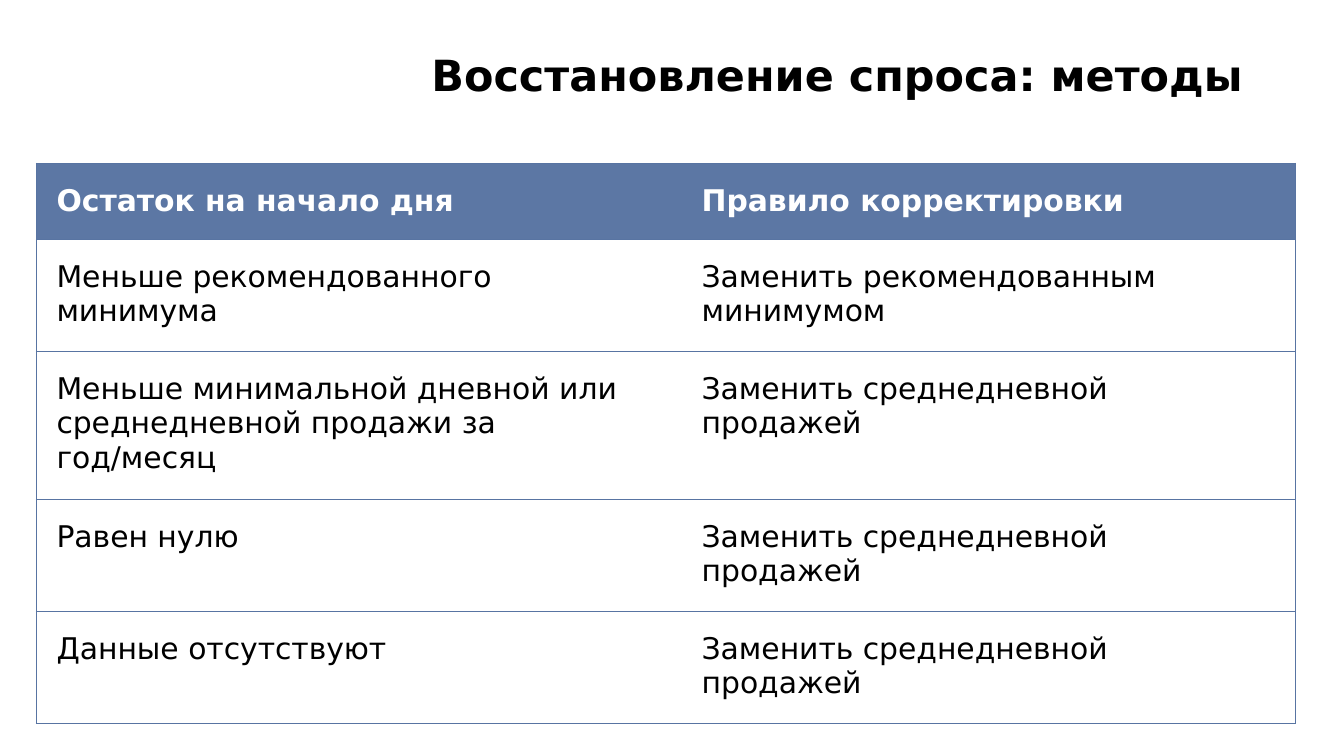
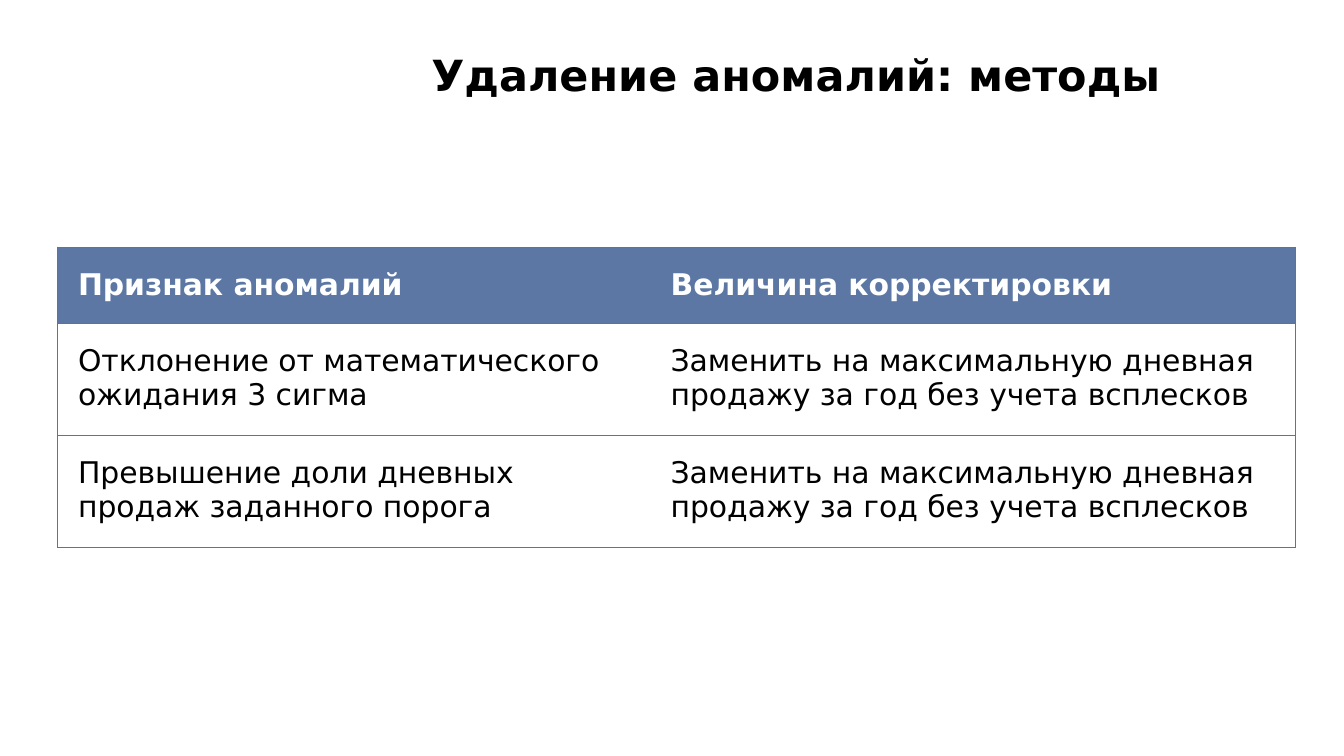
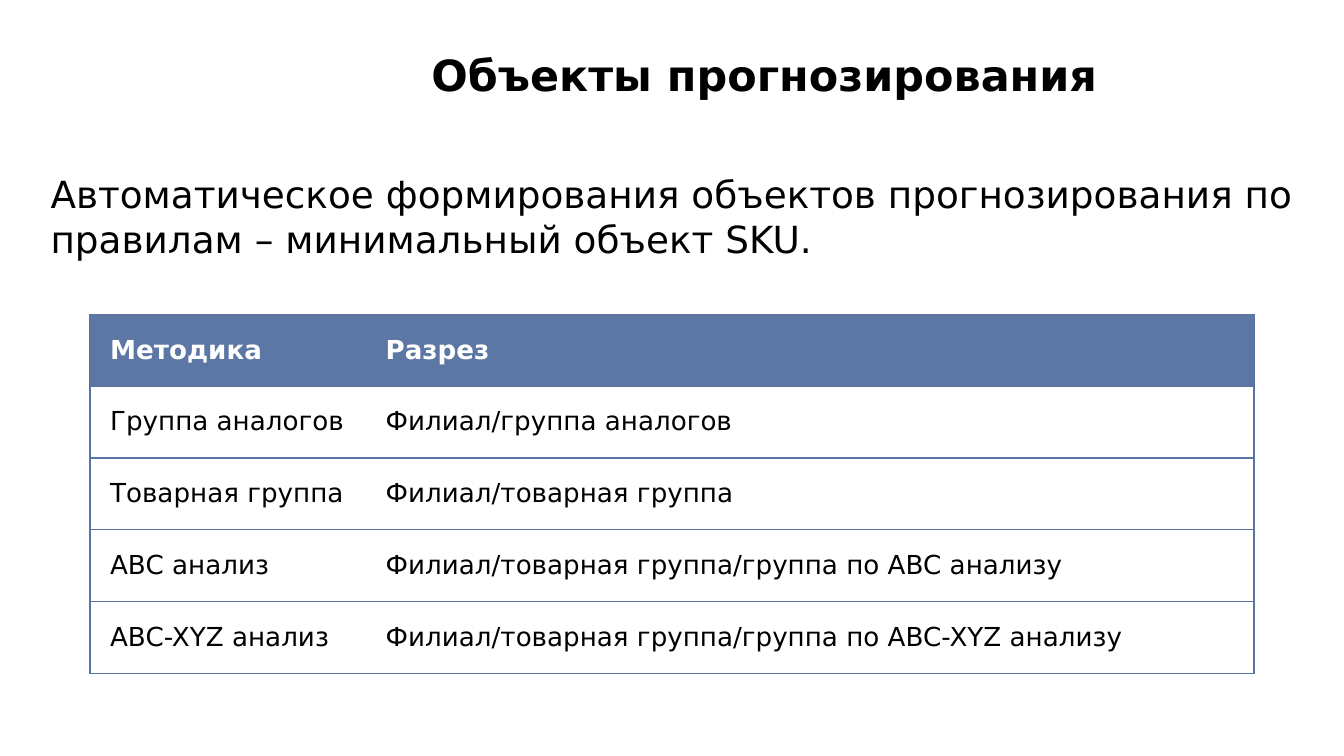
from dataclasses import dataclass

from lxml.etree import SubElement as Sub
from pptx import Presentation
from pptx.dml.color import RGBColor as RGB
from pptx.enum.text import MSO_ANCHOR as Anchor
from pptx.oxml.ns import qn
from pptx.util import Pt


@dataclass(frozen=True)
class Theme:
    face: str = "DejaVu Sans"
    ink: RGB = RGB(0, 0, 0)
    paper: RGB = RGB(255, 255, 255)
    head: RGB = RGB(0x5C, 0x77, 0xA4)
    rule: RGB = RGB(0x58, 0x74, 0xA2)
    title: float = 23
    lead: float = 20
    cell: float = 16
    small: float = 14
    line: float = 0.75
    pad: float = 10.8


T = Theme()

# Table contents: the header row comes first
DEMAND = [
    ("Остаток на начало дня", "Правило корректировки"),
    ("Меньше рекомендованного минимума", "Заменить рекомендованным минимумом"),
    ("Меньше минимальной дневной или среднедневной продажи за год/месяц",
     "Заменить среднедневной продажей"),
    ("Равен нулю", "Заменить среднедневной продажей"),
    ("Данные отсутствуют", "Заменить среднедневной продажей"),
]
SPIKES = [
    ("Признак аномалий", "Величина корректировки"),
    ("Отклонение от математического ожидания 3 сигма",
     "Заменить на максимальную дневная продажу за год без учета всплесков"),
    ("Превышение доли дневных продаж заданного порога",
     "Заменить на максимальную дневная продажу за год без учета всплесков"),
]
OBJECTS = [
    ("Методика", "Разрез"),
    ("Группа аналогов", "Филиал/группа аналогов"),
    ("Товарная группа", "Филиал/товарная группа"),
    ("ABC анализ", "Филиал/товарная группа/группа по ABC анализу"),
    ("ABC-XYZ анализ", "Филиал/товарная группа/группа по ABC-XYZ анализу"),
]


def style(para, size, color=T.ink, bold=False):
    form = {"name": T.face, "size": Pt(size), "bold": bold}
    for key, value in form.items():
        setattr(para.font, key, value)
    para.font.color.rgb = color


def add_text(slide, text, box, size, bold=False, anchor=Anchor.TOP):
    frame = slide.shapes.add_textbox(*map(Pt, box)).text_frame
    frame.word_wrap = True
    frame.vertical_anchor = anchor
    para = frame.paragraphs[0]
    para.text = text
    style(para, size, bold=bold)


def add_page(deck, title):
    slide = deck.slides.add_slide(deck.slide_layouts[6])
    add_text(slide, title, (224, 21, 478, 38), T.title, True, Anchor.MIDDLE)
    return slide


def set_edges(cell, shown):
    """Draw the shown sides and hide the others."""
    props = cell._tc.get_or_add_tcPr()
    for pos, side in enumerate("LRTB"):
        edge = Sub(props, qn(f"a:ln{side}"), w=str(Pt(T.line)))
        if side in shown:
            fill = Sub(edge, qn("a:solidFill"))
            Sub(fill, qn("a:srgbClr"), val=str(T.rule))
        else:
            Sub(edge, qn("a:noFill"))
        props.insert(pos, edge)


def fill_cell(cell, text, size, head):
    form = {"margin_left": Pt(T.pad), "margin_right": Pt(T.pad),
            "margin_top": Pt(T.pad), "margin_bottom": Pt(T.pad),
            "text": text}
    for key, value in form.items():
        setattr(cell, key, value)
    cell.fill.solid()
    cell.fill.fore_color.rgb = T.head if head else T.paper
    style(cell.text_frame.paragraphs[0], size,
          T.paper if head else T.ink, head)


def add_grid(slide, data, spot, widths, heights, size=T.cell):
    span = (*spot, sum(widths), sum(heights))
    table = slide.shapes.add_table(
        len(data), len(widths), *map(Pt, span)).table
    for col, width in zip(table.columns, widths):
        col.width = Pt(width)
    for row, height in zip(table.rows, heights):
        row.height = Pt(height)
    for r, texts in enumerate(data):
        for c, text in enumerate(texts):
            cell = table.cell(r, c)
            fill_cell(cell, text, size, head=r == 0)
            set_edges(cell, "TBL" if c == 0 else "TBR")


def main():
    deck = Presentation()
    deck.slide_width, deck.slide_height = Pt(720), Pt(405)

    # Restoring demand
    page = add_page(deck, "Восстановление спроса: методы")
    add_grid(page, DEMAND, (19.5, 87.5), (345.6, 329),
             (40.4, 58.6, 77, 58.6, 58.6))

    # Removing anomalies
    page = add_page(deck, "Удаление аномалий: методы")
    add_grid(page, SPIKES, (31, 132.5), (317.5, 345.6), (40.4, 58.6, 58.6))

    # Forecast objects
    page = add_page(deck, "Объекты прогнозирования")
    add_text(page, "Автоматическое формирования объектов прогнозирования "
             "по правилам – минимальный объект SKU.",
             (20, 88, 681, 278), T.lead)
    add_grid(page, OBJECTS, (48.2, 168.5), (147.6, 476),
             [38] * len(OBJECTS), T.small)

    deck.save("out.pptx")


if __name__ == "__main__":
    main()
